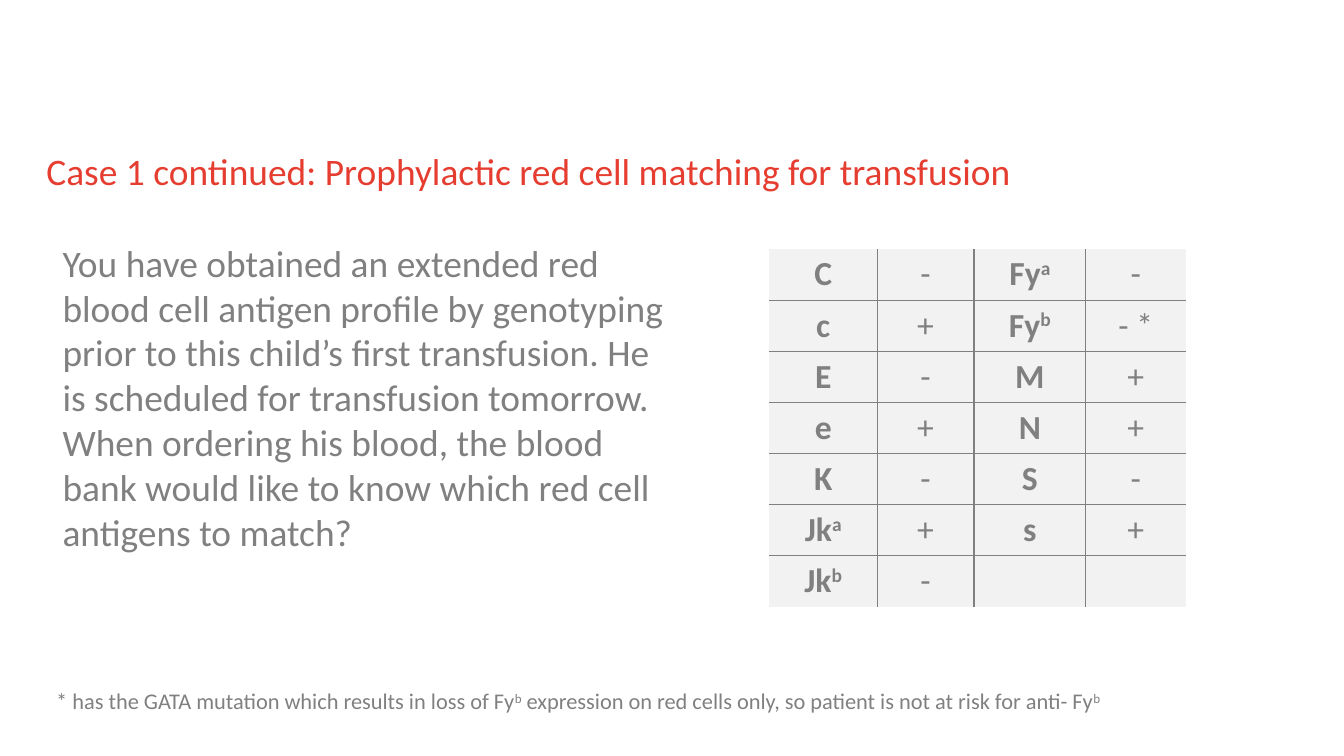
from lxml import etree
from pptx import Presentation
from pptx.dml.color import RGBColor
from pptx.enum.text import MSO_ANCHOR, MSO_AUTO_SIZE, PP_ALIGN
from pptx.oxml.ns import qn
from pptx.util import Inches, Pt

RED = RGBColor(0xE5, 0x3E, 0x31)
GRAY = RGBColor(0x80, 0x80, 0x80)
PALE = RGBColor(0xF2, 0xF2, 0xF2)
LEFT, CENTER = PP_ALIGN.LEFT, PP_ALIGN.CENTER
TOP, MIDDLE = MSO_ANCHOR.TOP, MSO_ANCHOR.MIDDLE
FIXED, GROW = MSO_AUTO_SIZE.NONE, MSO_AUTO_SIZE.SHAPE_TO_FIT_TEXT

TITLE = "Case 1 continued: Prophylactic red cell matching for transfusion"
QUESTION = (
    "You have obtained an extended red blood cell antigen profile by genotyping "
    "prior to this child’s first transfusion. He is scheduled for transfusion "
    "tomorrow. When ordering his blood, the blood bank would like to know which "
    "red cell antigens to match?"
)
FOOTNOTE = (
    "* has the GATA mutation which results in loss of Fy^b^ expression on red "
    "cells only, so patient is not at risk for anti- Fy^b^"
)
ANTIGENS = [
    ("C", "-", "Fy^a^", "-"),
    ("c", "+", "Fy^b^", "- *"),
    ("E", "-", "M", "+"),
    ("e", "+", "N", "+"),
    ("K", "-", "S", "-"),
    ("Jk^a^", "+", "s", "+"),
    ("Jk^b^", "-", "", ""),
]
COLUMN_WIDTHS = (1.07, 0.96, 1.11, 0.99)
ROW_HEIGHT = 0.5


def apply(target, values):
    """Set each attribute of the target from a dict."""
    for name, value in values.items():
        setattr(target, name, value)


class CaseSlide:
    """Holds the text style and the current slide."""

    font_name = "Calibri"

    def __init__(self, deck):
        """Add a title and content slide to the deck."""
        self.page = deck.slides.add_slide(deck.slide_layouts[1])

    def add_text(self, para, text, size, color=GRAY, bold=False, align=LEFT):
        """Fill a paragraph, raising the parts between carets."""
        apply(para, {"alignment": align, "space_before": Pt(0)})
        for index, part in enumerate(text.split("^")):
            if not part:
                continue
            span = para.add_run()
            span.text = part
            apply(span.font, {"name": self.font_name, "size": Pt(size), "bold": bold})
            span.font.color.rgb = color
            if index % 2:
                span._r.get_or_add_rPr().set("baseline", "30000")

    def frame(self, box, place, insets, fit=FIXED):
        """Place a text shape and return its first paragraph."""
        sides = ("left", "top", "width", "height")
        apply(box, {side: Inches(value) for side, value in zip(sides, place)})
        margins = ("margin_left", "margin_top", "margin_right", "margin_bottom")
        values = {margin: Inches(value) for margin, value in zip(margins, insets)}
        values.update(word_wrap=True, auto_size=fit, vertical_anchor=TOP)
        apply(box.text_frame, values)
        return box.text_frame.paragraphs[0]

    def title(self, text, place):
        """Set the slide title."""
        para = self.frame(self.page.shapes.title, place, (0, 0, 0.1, 0.05))
        self.add_text(para, text, 26.7, RED)

    def body(self, text, place):
        """Set the body without a bullet."""
        para = self.frame(self.page.placeholders[1], place, (0, 0, 0, 0))
        properties = para._p.get_or_add_pPr()
        for name in ("marL", "indent"):
            properties.set(name, "0")
        etree.SubElement(properties, qn("a:buNone"))
        self.add_text(para, text, 26.7)

    def note(self, text, place):
        """Add a small text box."""
        box = self.page.shapes.add_textbox(*map(Inches, place))
        para = self.frame(box, place, (0.1, 0.05, 0.1, 0.05), GROW)
        self.add_text(para, text, 16)

    def border(self, cell, side, visible):
        """Draw or clear one side of a cell."""
        line = etree.SubElement(cell._tc.get_or_add_tcPr(), qn(f"a:ln{side}"), w="12700")
        if visible:
            fill = etree.SubElement(line, qn("a:solidFill"))
            etree.SubElement(fill, qn("a:srgbClr"), val=str(GRAY))
        else:
            etree.SubElement(line, qn("a:noFill"))

    def table(self, rows, left, top):
        """Add the antigen table with inner rules only."""
        last_row, last_column = len(rows) - 1, len(COLUMN_WIDTHS) - 1
        size = (sum(COLUMN_WIDTHS), ROW_HEIGHT * len(rows))
        table = self.page.shapes.add_table(
            len(rows), len(COLUMN_WIDTHS), *map(Inches, (left, top, *size))
        ).table
        apply(table, {"first_row": False, "horz_banding": False})
        for column, width in zip(table.columns, COLUMN_WIDTHS):
            column.width = Inches(width)
        for r, values in enumerate(rows):
            for c, text in enumerate(values):
                cell = table.cell(r, c)
                inner = {"L": c > 0, "R": c < last_column, "T": r > 0, "B": r < last_row}
                for side, visible in inner.items():
                    self.border(cell, side, visible)
                cell.fill.solid()
                cell.fill.fore_color.rgb = PALE
                cell.vertical_anchor = MIDDLE
                para = cell.text_frame.paragraphs[0]
                self.add_text(para, text, 24, bold=c % 2 == 0, align=CENTER)


def main():
    """Build and save the deck."""
    deck = Presentation()
    apply(deck, {"slide_width": Inches(13.33), "slide_height": Inches(7.5)})
    case = CaseSlide(deck)
    case.title(TITLE, (0.46, 1.47, 12, 0.78))
    case.body(QUESTION, (0.62, 2.38, 6.04, 4.32))
    case.table(ANTIGENS, 7.63, 2.47)
    case.note(FOOTNOTE, (0.46, 6.77, 12.16, 0.37))
    deck.save("out.pptx")


if __name__ == "__main__":
    main()
